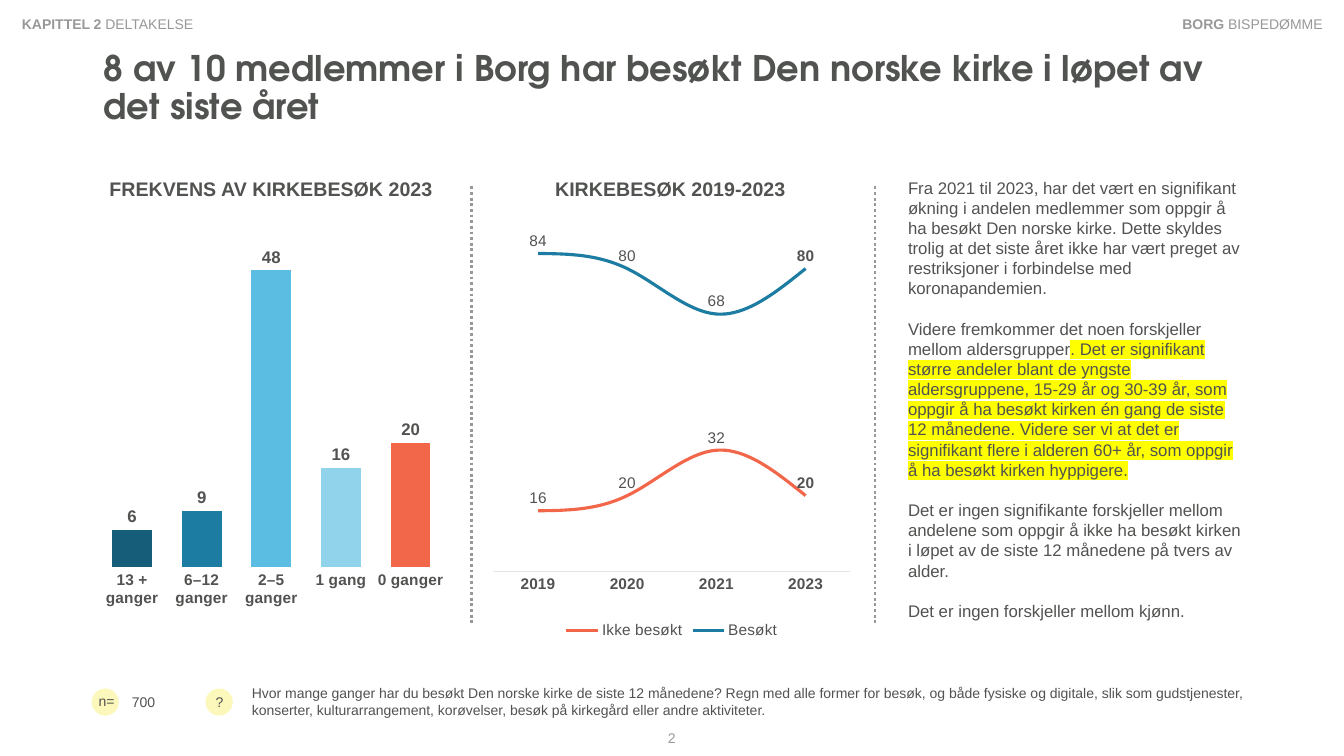
import pptx
import pptx.util
import pptx.dml.color
import pptx.chart.data
import pptx.enum.chart
import pptx.enum.dml
import pptx.enum.shapes
import pptx.enum.text
import pptx.oxml
import pptx.oxml.ns
from lxml import etree

Pt = pptx.util.Pt
qn = pptx.oxml.ns.qn
Align = pptx.enum.text.PP_ALIGN
Anchor = pptx.enum.text.MSO_ANCHOR
LabelPosition = pptx.enum.chart.XL_LABEL_POSITION
ChartType = pptx.enum.chart.XL_CHART_TYPE

COLORS = {
    "text": "515350", "muted": "969995", "page": "989998", "badge": "FCF7BA",
    "highlight": "FFFF00", "axis": "E5E5E4", "none": "F26649", "once": "92D3EC",
    "few": "5BBDE2", "several": "1C7CA1", "many": "155D79", "bars": "BFBFBF",
}


class Deck:
    """Holds the style and the current slide."""

    def __init__(self, slide):
        self.slide = slide
        self.font = {"name": "Arial", "size": Pt(10), "bold": False}

    def color(self, key):
        return pptx.dml.color.RGBColor.from_string(COLORS[key])

    def assign(self, target, values):
        for attribute, value in values.items():
            setattr(target, attribute, value)

    def style(self, font, color="text", **changes):
        self.assign(font, {**self.font, **changes})
        font.color.rgb = self.color(color)

    def fill(self, part, color):
        part.fill.solid()
        part.fill.fore_color.rgb = self.color(color)

    def text(self, box, paragraphs, anchor=Anchor.TOP, color="text",
             paragraph_format=None, gap=0, **font):
        """Each paragraph is a list of (text, font changes, highlight) runs."""
        frame = self.slide.shapes.add_textbox(*map(Pt, box)).text_frame
        self.assign(frame, {"word_wrap": True, "vertical_anchor": anchor})
        for index, runs in enumerate(paragraphs):
            paragraph = frame.add_paragraph() if index else frame.paragraphs[0]
            self.assign(paragraph, paragraph_format or {})
            if index:
                paragraph.space_before = Pt(gap)
            for words, changes, highlight in runs:
                run = paragraph.add_run()
                run.text = words
                self.style(run.font, color, **{**font, **changes})
                if highlight:
                    mark = etree.Element(qn("a:highlight"))
                    etree.SubElement(mark, qn("a:srgbClr"), val=COLORS[highlight])
                    run._r.rPr.find(qn("a:solidFill")).addnext(mark)

    def line(self, words, box, **options):
        self.text(box, [[(words, {}, None)]], **options)

    def badge(self, x, y, size):
        oval = pptx.enum.shapes.MSO_SHAPE.OVAL
        circle = self.slide.shapes.add_shape(oval, Pt(x), Pt(y), Pt(size), Pt(size))
        circle.shadow.inherit = False
        self.fill(circle, "badge")
        circle.line.fill.background()

    def divider(self, x, top, bottom):
        straight = pptx.enum.shapes.MSO_CONNECTOR.STRAIGHT
        rule = self.slide.shapes.add_connector(straight, Pt(x), Pt(top), Pt(x), Pt(bottom))
        rule.line.color.rgb = self.color("muted")
        rule.line.width = Pt(2)
        rule.line.dash_style = pptx.enum.dml.MSO_LINE.ROUND_DOT
        etree.SubElement(rule._element.spPr, qn("a:effectLst"))

    def chart(self, kind, box, categories, series, plot_area, maximum):
        data = pptx.chart.data.CategoryChartData(number_format="0")
        data.categories = categories
        for name, values in series.items():
            data.add_series(name, values)
        chart = self.slide.shapes.add_chart(kind, *map(Pt, box), data).chart
        self.style(chart.font, size=Pt(11))
        self.assign(chart, {"has_title": False, "has_legend": False})
        chart.plots[0].vary_by_categories = False
        self.assign(chart.value_axis, {
            "visible": False, "has_major_gridlines": False,
            "minimum_scale": 0, "maximum_scale": maximum})
        tick = pptx.enum.chart.XL_TICK_MARK.NONE
        self.assign(chart.category_axis, {"major_tick_mark": tick, "minor_tick_mark": tick})
        self.style(chart.category_axis.tick_labels.font, size=Pt(11), bold=True)
        # Fixed inner plot area
        area = chart._chartSpace.chart.plotArea
        for old in area.findall(qn("c:layout")):
            area.remove(old)
        layout = etree.Element(qn("c:layout"))
        manual = etree.SubElement(layout, qn("c:manualLayout"))
        settings = {"layoutTarget": "inner", "xMode": "edge", "yMode": "edge",
                    **dict(zip("xywh", plot_area))}
        for tag, value in settings.items():
            etree.SubElement(manual, qn("c:" + tag), val=str(value))
        area.insert(0, layout)
        return chart

    def labels(self, labels, position, **font):
        self.assign(labels, {"show_value": True, "number_format": "0",
                             "number_format_is_linked": False, "position": position})
        self.style(labels.font, **font)


def main():
    deck_file = pptx.Presentation()
    deck_file.slide_width, deck_file.slide_height = Pt(960), Pt(540)
    deck = Deck(deck_file.slides.add_slide(deck_file.slide_layouts[6]))

    # Running heads and title
    bold = {"bold": True}
    deck.text((8.6, 7.2, 406, 19.4),
              [[("KAPITTEL 2 ", bold, None), ("DELTAKELSE", {}, None)]], color="muted")
    deck.text((800.6, 7.2, 151.2, 19.4),
              [[("BORG ", bold, None), ("BISPEDØMME", {}, None)]],
              color="muted", paragraph_format={"alignment": Align.RIGHT})
    deck.line("8 av 10 medlemmer i Borg har besøkt Den norske kirke i løpet av det siste året",
              (67, 28.1, 829.4, 66.2), anchor=Anchor.BOTTOM,
              paragraph_format={"line_spacing": 0.9},
              name="TeX Gyre Adventor", size=Pt(25.2), bold=True)

    # Visit frequency
    visits = deck.chart(
        ChartType.COLUMN_CLUSTERED, (66.2, 122.4, 255.6, 337),
        ["0 ganger", "1 gang", "2–5 ganger", "6–12 ganger", "13 + ganger"],
        {"Series 1": [20, 16, 48, 9, 6]}, (0.013, 0.207, 0.973, 0.631), 48.2)
    visits.category_axis.reverse_order = True
    visits.category_axis.format.line.fill.background()
    visits.value_axis.major_unit = 0.2
    visits.plots[0].gap_width = 75
    frequency = visits.plots[0].series[0]
    deck.fill(frequency.format, "bars")
    for index, color in enumerate(["none", "once", "few", "several", "many"]):
        deck.fill(frequency.points[index].format, color)
    deck.labels(frequency.data_labels, LabelPosition.OUTSIDE_END, size=Pt(12), bold=True)

    # Trend
    trend = deck.chart(
        ChartType.LINE, (352.1, 122.4, 255.6, 337), ["2019", "2020", "2021", "2023"],
        {"Ikke besøkt": [16, 20, 32, 20], "Besøkt": [84, 80, 68, 80]},
        (0, 0.126, 1, 0.722), 90)
    trend.category_axis.format.line.color.rgb = deck.color("axis")
    trend.category_axis.format.line.width = Pt(0.75)
    for answer, color in zip(trend.plots[0].series, ["none", "several"]):
        answer.smooth = True
        answer.marker.style = pptx.enum.chart.XL_MARKER_STYLE.NONE
        answer.format.line.color.rgb = deck.color(color)
        answer.format.line.width = Pt(2.25)
        deck.labels(answer.data_labels, LabelPosition.ABOVE, size=Pt(11))
        latest = answer.points[3].data_label
        deck.style(latest.font, size=Pt(11), bold=True)
        latest.position = LabelPosition.ABOVE
    trend.has_legend = True
    deck.assign(trend.legend, {"position": pptx.enum.chart.XL_LEGEND_POSITION.BOTTOM,
                               "include_in_layout": False})
    deck.style(trend.legend.font, size=Pt(11))

    # Chart headings and dividers
    for heading, x in [("FREKVENS AV KIRKEBESØK 2023", 66.2), ("KIRKEBESØK 2019-2023", 351.4)]:
        deck.line(heading, (x, 123.1, 254.9, 24.5), size=Pt(14), bold=True,
                  paragraph_format={"alignment": Align.CENTER})
    for x in (337, 625):
        deck.divider(x, 133.2, 446.4)

    # Commentary
    deck.text((641.5, 123.1, 255.6, 326.9), [
        [("Fra 2021 til 2023, har det vært en signifikant økning i andelen medlemmer som oppgir "
          "å ha besøkt Den norske kirke. Dette skyldes trolig at det siste året ikke har vært "
          "preget av restriksjoner i forbindelse med koronapandemien.", {}, None)],
        [("Videre fremkommer det noen forskjeller mellom aldersgrupper", {}, None),
         (". Det er signifikant større andeler blant de yngste aldersgruppene, 15-29 år og "
          "30-39 år, som oppgir å ha besøkt kirken én gang de siste 12 månedene. Videre ser vi "
          "at det er signifikant flere i alderen 60+ år, som oppgir å ha besøkt kirken "
          "hyppigere.", {}, "highlight")],
        [("Det er ingen signifikante forskjeller mellom andelene som oppgir å ikke ha besøkt "
          "kirken i løpet av de siste 12 månedene på tvers av alder.", {}, None)],
        [("Det er ingen forskjeller mellom kjønn.", {}, None)],
    ], gap=14.4, size=Pt(12))

    # Sample size, question and page number
    for x in (65.5, 146.9):
        deck.badge(x, 491.8, 19.4)
    deck.line("n=", (63.4, 491, 32.4, 19.4))
    deck.line("?", (146.9, 491.8, 18, 19.4))
    deck.line("700", (87.1, 491.8, 53.3, 19.4), anchor=Anchor.MIDDLE)
    deck.line("Hvor mange ganger har du besøkt Den norske kirke de siste 12 månedene? Regn med alle "
              "former for besøk, og både fysiske og digitale, slik som gudstjenester, konserter, "
              "kulturarrangement, korøvelser, besøk på kirkegård eller andre aktiviteter.",
              (172.8, 478.1, 723.6, 46.1), anchor=Anchor.MIDDLE)
    deck.line("2", (452.9, 514.8, 54, 25.2), anchor=Anchor.MIDDLE, color="page",
              paragraph_format={"alignment": Align.CENTER})
    deck_file.save("out.pptx")


if __name__ == "__main__":
    main()
